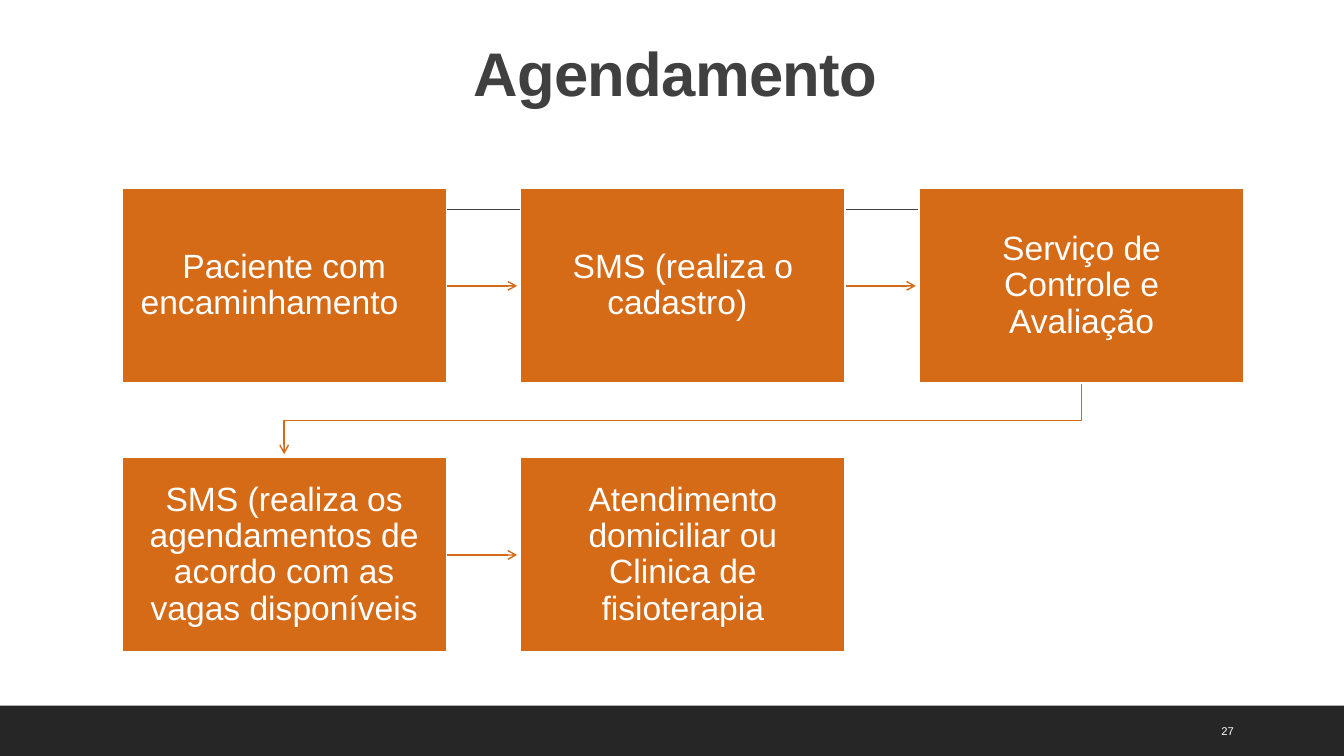
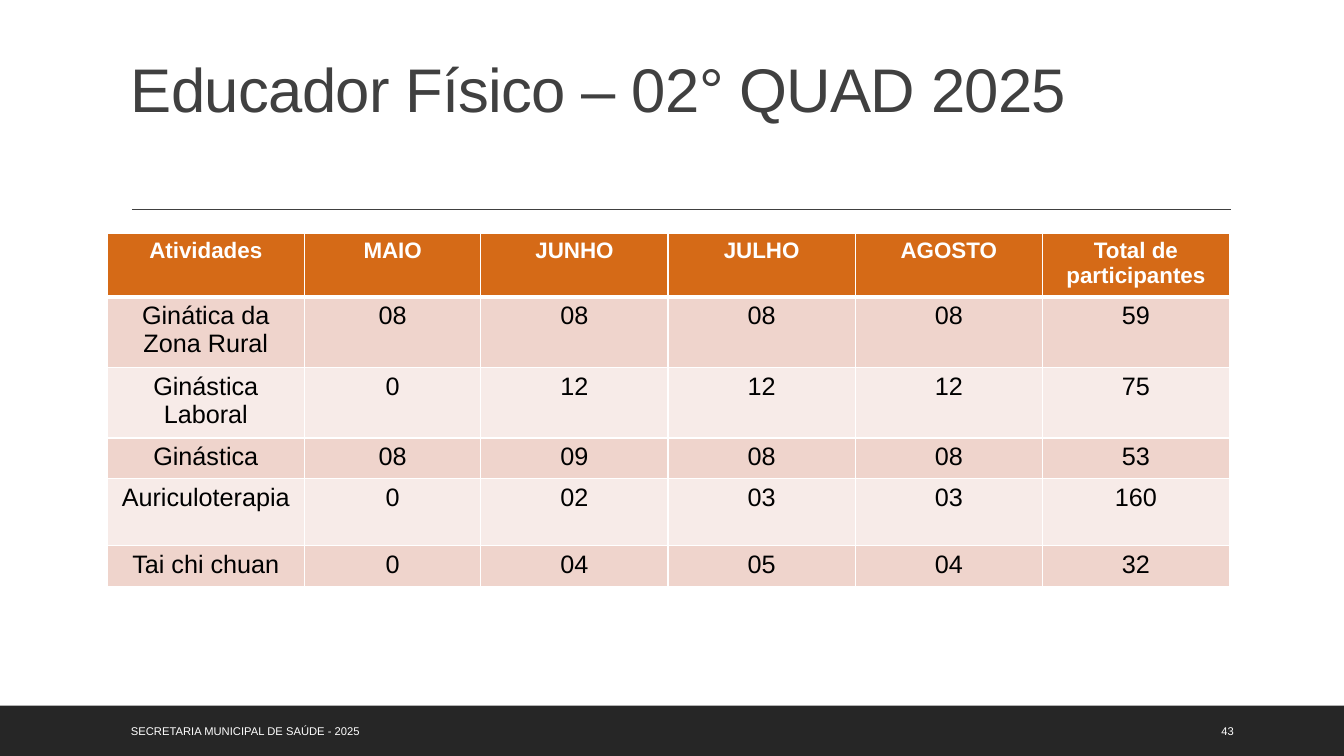
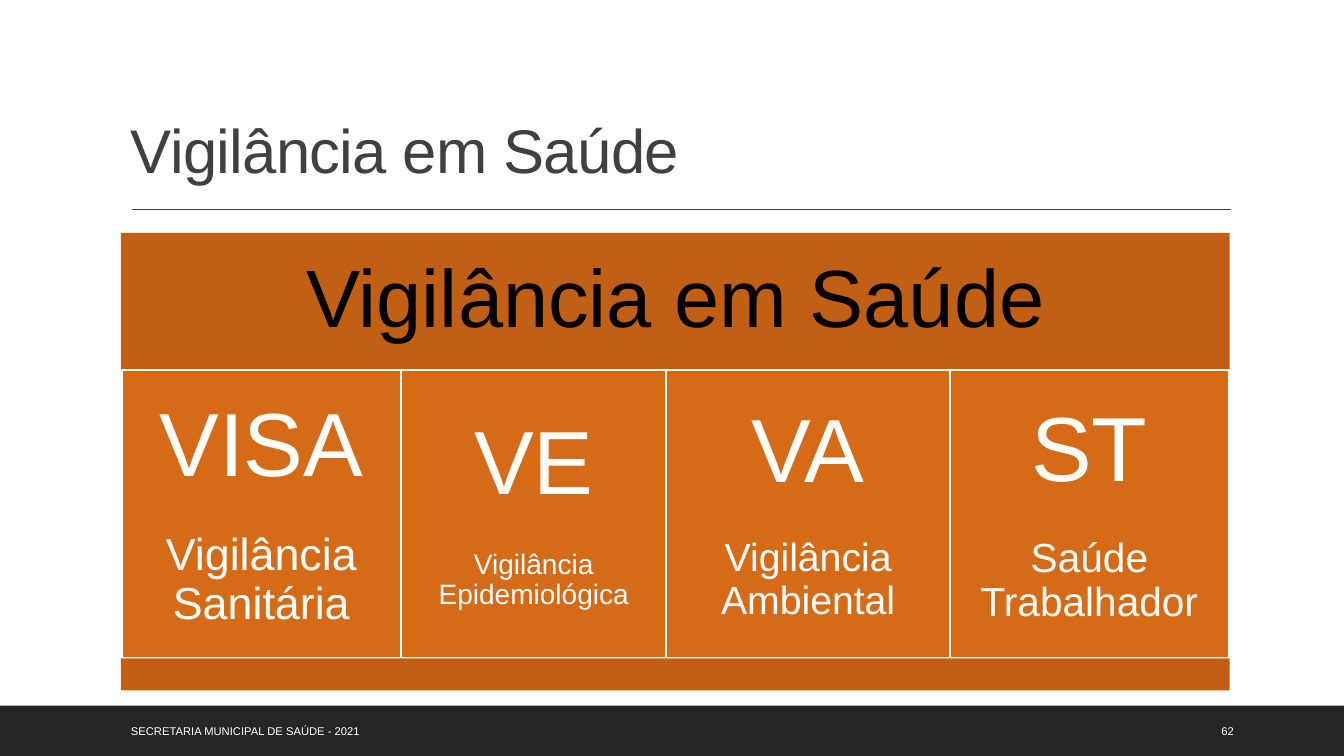
"""Build three health-department slides: a scheduling flow, an activity table and a surveillance overview."""
from dataclasses import dataclass

from lxml.etree import SubElement
from pptx import Presentation
from pptx.dml.color import RGBColor as Rgb
from pptx.enum.shapes import MSO_CONNECTOR as Connector, MSO_SHAPE as Shape
from pptx.enum.text import MSO_ANCHOR as Anchor, PP_ALIGN as Align
from pptx.oxml.ns import qn
from pptx.util import Pt


@dataclass(frozen=True)
class Theme:
    font: str = "Arial"
    white: str = "FFFFFF"
    black: str = "000000"
    dark: str = "262626"
    gray: str = "404040"
    orange: str = "D56A17"
    deep_orange: str = "C16015"
    stripes: tuple = ("F7EBE8", "EFD4CC")
    title: int = 44
    flow: int = 24
    heading: int = 58
    table_head: int = 16
    table_body: int = 18
    footer: int = 8


theme = Theme()


def write(frame, lines, color, align=Align.CENTER, bold=False, spacing=0.9, tracking=0, **frame_format):
    """Fill a text frame with (text, size) lines."""
    for name, value in {"word_wrap": True, **frame_format}.items():
        setattr(frame, name, value)
    for index, (text, size) in enumerate(lines):
        para = frame.add_paragraph() if index else frame.paragraphs[0]
        para_format = {"alignment": align, "line_spacing": spacing, "space_after": Pt(0.4 * size)}
        for name, value in para_format.items():
            setattr(para, name, value)
        span = para.add_run()
        span.text = text
        for name, value in {"name": theme.font, "size": Pt(size), "bold": bold}.items():
            setattr(span.font, name, value)
        span.font.color.rgb = Rgb.from_string(color)
        if tracking:
            span.font._element.set("spc", str(tracking))


def add_box(page, left, top, width, height, fill, outlined=False):
    """Add a flat rectangle, with a white outline if asked."""
    box = page.shapes.add_shape(Shape.RECTANGLE, Pt(left), Pt(top), Pt(width), Pt(height))
    box.shadow.inherit = False
    box.fill.solid()
    box.fill.fore_color.rgb = Rgb.from_string(fill)
    if outlined:
        box.line.color.rgb = Rgb.from_string(theme.white)
        box.line.width = Pt(1.25)
    else:
        box.line.fill.background()
    return box


deck = Presentation()
deck.slide_width, deck.slide_height = Pt(960), Pt(540)

page_specs = [
    ("Agendamento", 60, Align.CENTER, True, "", "27"),
    ("Educador Físico – 02° QUAD 2025", 71.3, Align.LEFT, False, "SECRETARIA MUNICIPAL DE SAÚDE - 2025", "43"),
    ("Vigilância em Saúde", 114.5, Align.LEFT, False, "SECRETARIA MUNICIPAL DE SAÚDE - 2021", "62"),
]
pages = []
for title, title_height, align, bold, footer, number in page_specs:
    page = deck.slides.add_slide(deck.slide_layouts[6])
    pages.append(page)
    add_box(page, 0, 504, 960, 36, theme.dark)
    rule = page.shapes.add_connector(Connector.STRAIGHT, Pt(94.3), Pt(149.5), Pt(879), Pt(149.5))
    rule.line.color.rgb = Rgb.from_string(theme.gray)
    rule.line.width = Pt(1)
    SubElement(rule._element.spPr, qn("a:effectLst"))
    title_box = page.shapes.add_textbox(Pt(86.4), Pt(22.3), Pt(792), Pt(title_height))
    write(title_box.text_frame, [(title, theme.title)], theme.gray, align, bold,
          tracking=-50, vertical_anchor=Anchor.BOTTOM)
    for text, left, width in [(footer, 86.4, 537), (number, 865.4, 61)]:
        if text:
            footer_box = page.shapes.add_textbox(Pt(left), Pt(507.6), Pt(width), Pt(28.8))
            write(footer_box.text_frame, [(text, theme.footer)], theme.white, Align.LEFT,
                  spacing=1.0, vertical_anchor=Anchor.MIDDLE)

flow_page, table_page, overview_page = pages

steps = [
    "Paciente com encaminhamento\t",
    "SMS (realiza o cadastro)\t",
    "Serviço de Controle e Avaliação",
    "SMS (realiza os agendamentos de acordo com as vagas disponíveis",
    "Atendimento domiciliar ou Clinica de fisioterapia",
]
columns, step_width, step_height = 3, 232, 139
places = [(87 + 284.8 * (index % columns), 134.7 + 192.2 * (index // columns)) for index in range(len(steps))]
arrows = []
for (left, top), (next_left, next_top) in zip(places, places[1:]):
    if top == next_top:
        middle = Pt(top + step_height / 2)
        arrow = flow_page.shapes.add_connector(
            Connector.STRAIGHT, Pt(left + step_width), middle, Pt(next_left - 2.5), middle)
    else:
        start, end = Pt(left + step_width / 2), Pt(next_left + step_width / 2)
        bottom = top + step_height
        turn = Pt((bottom + next_top) / 2)
        outline = flow_page.shapes.build_freeform(start, Pt(bottom))
        outline.add_line_segments([(start, turn), (end, turn), (end, Pt(next_top - 2.5))], close=False)
        arrow = outline.convert_to_shape()
        arrow.fill.background()
    arrows.append(arrow)
for arrow in arrows:
    arrow.line.color.rgb = Rgb.from_string(theme.orange)
    arrow.line.width = Pt(1)
    SubElement(arrow.line._get_or_add_ln(), qn("a:tailEnd"), type="arrow")
    SubElement(arrow._element.spPr, qn("a:effectLst"))

step_margins = {f"margin_{side}": Pt(13.5) for side in ("left", "top", "right", "bottom")}
for step, (left, top) in zip(steps, places):
    box = add_box(flow_page, left, top, step_width, step_height, theme.orange, outlined=True)
    write(box.text_frame, [(step, theme.flow)], theme.white, vertical_anchor=Anchor.MIDDLE, **step_margins)

rows = [
    ("Atividades", "MAIO", "JUNHO", "JULHO", "AGOSTO", "Total de participantes"),
    ("Ginática da Zona Rural", "08", "08", "08", "08", "59"),
    ("Ginástica Laboral", "0", "12", "12", "12", "75"),
    ("Ginástica", "08", "09", "08", "08", "53"),
    ("Auriculoterapia", "0", "02", "03", "03", "160"),
    ("Tai chi chuan", "0", "04", "05", "04", "32"),
]
column_widths = [141, 126] + [133.7] * 4
row_heights = [42.2, 47.4, 47.4, 29.2, 47.4, 29.2]
table = table_page.shapes.add_table(
    len(rows), len(column_widths), Pt(76.5), Pt(166.4), Pt(sum(column_widths)), Pt(sum(row_heights))).table
for column, width in zip(table.columns, column_widths):
    column.width = Pt(width)
for row_index, (values, height) in enumerate(zip(rows, row_heights)):
    table.rows[row_index].height = Pt(height)
    is_head = row_index == 0
    fill = theme.orange if is_head else theme.stripes[row_index % 2]
    size = theme.table_head if is_head else theme.table_body
    borders = {"lnL": 1, "lnR": 1, "lnT": 3 if row_index == 1 else 1, "lnB": 3 if is_head else 1}
    for column_index, value in enumerate(values):
        cell = table.cell(row_index, column_index)
        write(cell.text_frame, [(value, size)], theme.white if is_head else theme.black,
              bold=is_head, spacing=1.0)
        properties = cell._tc.get_or_add_tcPr()
        for tag, width in borders.items():
            border = SubElement(properties, qn(f"a:{tag}"), w=str(Pt(width)))
            SubElement(SubElement(border, qn("a:solidFill")), qn("a:srgbClr"), val=theme.white)
        cell.fill.solid()
        cell.fill.fore_color.rgb = Rgb.from_string(fill)

heading_box = add_box(overview_page, 86.4, 166.3, 792, 98, theme.deep_orange)
write(heading_box.text_frame, [("Vigilância em Saúde", theme.heading)], theme.black,
      vertical_anchor=Anchor.MIDDLE)
areas = [
    (199.5, "VISA", 64, "Vigilância Sanitária", 32),
    (189.5, "VE", 64, "Vigilância Epidemiológica", 20),
    (202.5, "VA", 64, "Vigilância Ambiental", 28),
    (199.5, "ST", 65, "Saúde Trabalhador", 29),
]
area_margins = {f"margin_{side}": Pt(19.5) for side in ("left", "top", "right", "bottom")}
left = 87
for width, initials, initials_size, name, name_size in areas:
    box = add_box(overview_page, left, 264.2, width, 206, theme.orange, outlined=True)
    write(box.text_frame, [(initials, initials_size), (name, name_size)], theme.white,
          vertical_anchor=Anchor.MIDDLE, **area_margins)
    left += width
add_box(overview_page, 86.4, 470.2, 792, 23, theme.deep_orange)

deck.save("out.pptx")
